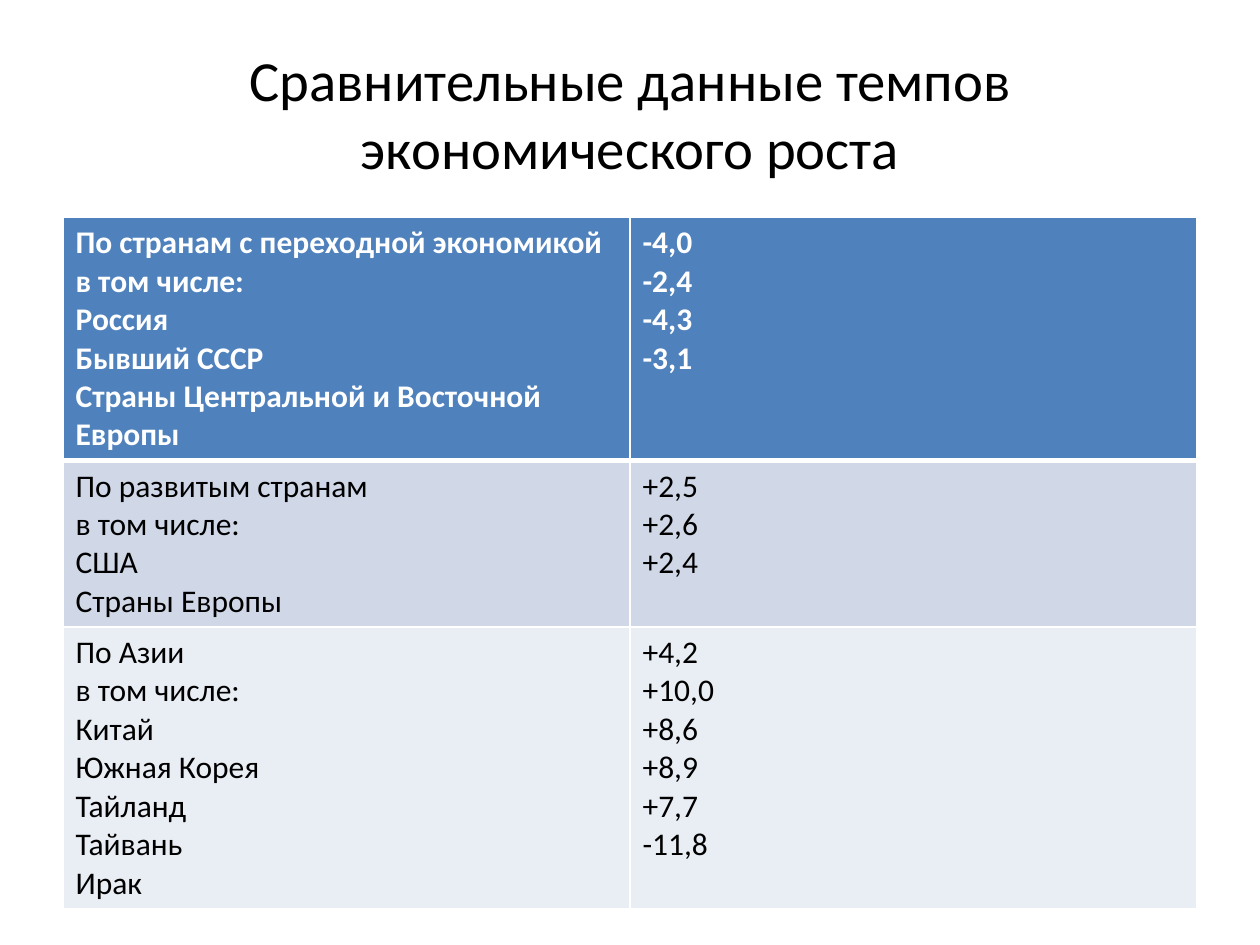
from dataclasses import dataclass

from lxml import etree
from pptx import Presentation, util as u
from pptx.dml.color import RGBColor
from pptx.enum import text
from pptx.oxml.ns import qn


@dataclass(frozen=True)
class Theme:
    font: str = "Calibri"
    title_size: float = 32.4
    body_size: float = 18
    ink: str = "000000"
    paper: str = "FFFFFF"
    header: str = "4F81BD"
    bands: tuple = ("D0D8E8", "E9EDF4")
    rule: float = 1
    header_rule: float = 3


THEME = Theme()
WIDTH, HEIGHT = u.Inches(10), u.Inches(7.5)
TITLE_BOX = (0.05, 0.07, 0.9, 0.17)
TABLE_BOX = (0.05, 0.23, 0.9, 0.73)
TITLE = "Сравнительные данные темпов экономического роста"
GROUPS = [
    (["По странам с переходной экономикой", "в том числе:", "Россия",
      "Бывший СССР", "Страны Центральной и Восточной Европы"],
     ["-4,0", "-2,4", "-4,3", "-3,1"]),
    (["По развитым странам", "в том числе:", "США", "Страны Европы"],
     ["+2,5", "+2,6", "+2,4"]),
    (["По Азии", "в том числе:", "Китай", "Южная Корея", "Тайланд",
      "Тайвань", "Ирак"],
     ["+4,2", "+10,0", "+8,6", "+8,9", "+7,7", "-11,8"]),
]
ROW_LINES = (6, 4, 7)


def place(box):
    left, top, width, height = box
    return (int(left * WIDTH), int(top * HEIGHT),
            int(width * WIDTH), int(height * HEIGHT))


def style(font, size, color, bold=False):
    font.name, font.size, font.bold = THEME.font, u.Pt(size), bold
    font.color.rgb = RGBColor.from_string(color)


def add_title(page, box):
    title = page.shapes.title
    title.left, title.top, title.width, title.height = place(box)
    frame = title.text_frame
    frame.text = TITLE
    frame.word_wrap = True
    frame.auto_size = text.MSO_AUTO_SIZE.NONE
    frame.vertical_anchor = text.MSO_ANCHOR.MIDDLE
    frame.margin_bottom = u.Inches(0.59)
    para = frame.paragraphs[0]
    para.alignment = text.PP_ALIGN.CENTER
    style(para.font, THEME.title_size, THEME.ink)


def add_borders(cell, widths):
    properties = cell._tc.get_or_add_tcPr()
    for side, width in widths.items():
        line = etree.SubElement(properties, qn(f"a:ln{side}"), w=str(u.Pt(width)))
        fill = etree.SubElement(line, qn("a:solidFill"))
        etree.SubElement(fill, qn("a:srgbClr"), val=THEME.paper)


def fill_cell(cell, lines, row):
    is_header = row == 0
    add_borders(cell, {
        "L": THEME.rule,
        "R": THEME.rule,
        "T": THEME.header_rule if row == 1 else THEME.rule,
        "B": THEME.header_rule if is_header else THEME.rule,
    })
    cell.fill.solid()
    cell.fill.fore_color.rgb = RGBColor.from_string(
        THEME.header if is_header else THEME.bands[(row - 1) % 2])
    cell.text_frame.text = "\n".join(lines)
    for para in cell.text_frame.paragraphs:
        style(para.font, THEME.body_size,
              THEME.paper if is_header else THEME.ink, is_header)


def add_growth_table(page, box):
    table = page.shapes.add_table(len(GROUPS), 2, *place(box)).table
    for row, (group, lines) in enumerate(zip(GROUPS, ROW_LINES)):
        table.rows[row].height = u.Inches(0.1 + 0.3 * lines)
        for column, entries in enumerate(group):
            fill_cell(table.cell(row, column), entries, row)


def main():
    deck = Presentation()
    deck.slide_width, deck.slide_height = WIDTH, HEIGHT
    page = deck.slides.add_slide(deck.slide_layouts[5])
    add_title(page, TITLE_BOX)
    add_growth_table(page, TABLE_BOX)
    deck.save("out.pptx")


if __name__ == "__main__":
    main()
